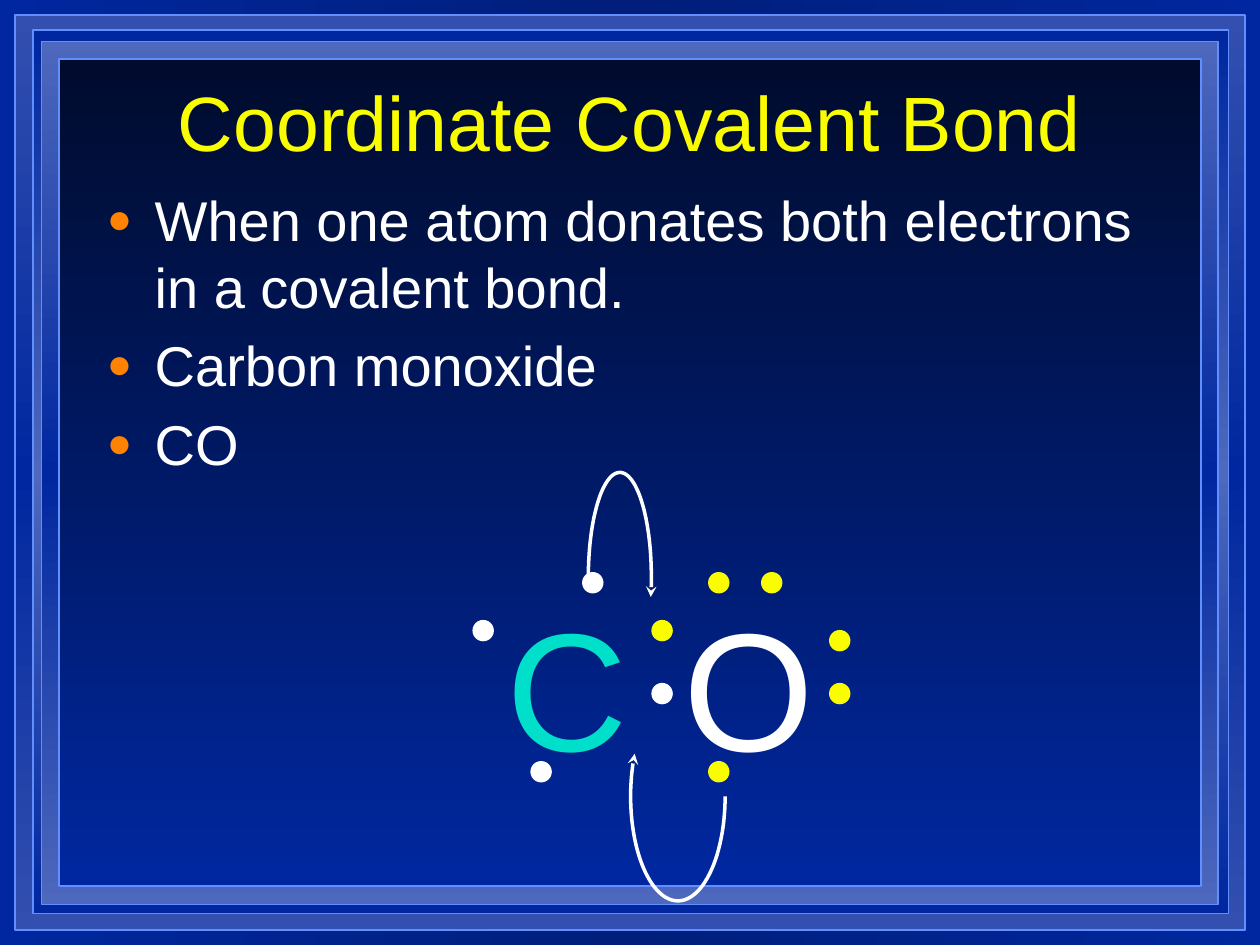
import math

from lxml import etree
from pptx import Presentation
from pptx import util as u
from pptx.dml.color import RGBColor
from pptx.enum import shapes, text
from pptx.oxml.ns import qn

COLOURS = {
    "blue": "00279F", "dusk": "001E7A", "night": "000B2D",
    "steel": "3350B0", "mist": "4D68BD", "edge": "618FFD",
    "yellow": "FAFD00", "white": "FFFFFF", "teal": "00DFCA", "orange": "FF8203",
}
FONT = "Arial"
DOT = 0.17


def rgb(name):
    return RGBColor.from_string(COLOURS[name])


def add_child(parent, tag, **attributes):
    return etree.SubElement(parent, qn(tag), attributes)


def set_gradient(fill, names, angle):
    """Spread the named colours evenly along a linear gradient."""
    fill.gradient()
    fill.gradient_angle = angle
    stops = fill.gradient_stops._gsLst
    for stop in list(stops):
        stops.remove(stop)
    for index, name in enumerate(names):
        position = round(100000 * index / (len(names) - 1))
        stop = add_child(stops, "a:gs", pos=str(position))
        add_child(stop, "a:srgbClr", val=COLOURS[name])


def add_bullet(para):
    properties = para._p.get_or_add_pPr()
    indent = u.Inches(0.38)
    properties.set("marL", str(indent))
    properties.set("indent", str(-indent))
    colour = add_child(properties, "a:buClr")
    add_child(colour, "a:srgbClr", val=COLOURS["orange"])
    add_child(properties, "a:buSzPct", val="75000")
    add_child(properties, "a:buFont", typeface=FONT)
    add_child(properties, "a:buChar", char="●")


def add_text(page, box, lines, size, colour, align=text.PP_ALIGN.LEFT,
             anchor=text.MSO_ANCHOR.TOP, bullets=False):
    frame = page.shapes.add_textbox(*map(u.Inches, box)).text_frame
    frame.word_wrap = True
    frame.vertical_anchor = anchor
    for index, line in enumerate(lines):
        para = frame.add_paragraph() if index else frame.paragraphs[0]
        para.alignment = align
        para.line_spacing = u.Pt(1.2 * size)
        if index:
            para.space_before = u.Pt(0.2 * size)
        if bullets:
            add_bullet(para)
        span = para.add_run()
        span.text = line
        span.font.name = FONT
        span.font.size = u.Pt(size)
        span.font.color.rgb = rgb(colour)


def add_frame(page):
    panels = [
        ((0.12, 0.12, 9.76, 7.26), ("steel", "blue", "steel")),
        ((0.26, 0.24, 9.49, 7.01), ("blue", "mist", "blue")),
        ((0.33, 0.33, 9.34, 6.85), ("mist", "blue", "mist")),
        ((0.47, 0.47, 9.06, 6.56), ("night", "blue")),
    ]
    for box, names in panels:
        panel = page.shapes.add_shape(shapes.MSO_SHAPE.RECTANGLE, *map(u.Inches, box))
        panel.shadow.inherit = False
        set_gradient(panel.fill, names, 270)
        panel.line.color.rgb = rgb("edge")
        panel.line.width = u.Pt(1)


def add_atom(page, left, top, symbol, colour, dot_colour, dots):
    """Place a symbol and its electrons, given as offsets from the symbol's box."""
    add_text(page, (left, top, 0.92, 1.7), [symbol], 96, colour)
    for across, down in dots:
        dot = page.shapes.add_shape(
            shapes.MSO_SHAPE.OVAL, u.Inches(left + across), u.Inches(top + down),
            u.Inches(DOT), u.Inches(DOT))
        dot.shadow.inherit = False
        dot.fill.solid()
        dot.fill.fore_color.rgb = rgb(dot_colour)
        dot.line.fill.background()


def add_curved_arrow(page, centre, radii, start, end, steps=60):
    """Draw an elliptical arc between two angles, clockwise in degrees."""
    points = []
    for step in range(steps + 1):
        angle = math.radians(start + (end - start) * step / steps)
        points.append((u.Inches(centre[0] + radii[0] * math.cos(angle)),
                       u.Inches(centre[1] + radii[1] * math.sin(angle))))
    builder = page.shapes.build_freeform(*points[0])
    builder.add_line_segments(points[1:], close=False)
    arrow = builder.convert_to_shape()
    arrow.shadow.inherit = False
    arrow.fill.background()
    arrow.line.color.rgb = rgb("white")
    arrow.line.width = u.Pt(2)
    add_child(arrow.line._get_or_add_ln(), "a:tailEnd", type="stealth")


def add_molecule(page, left, top):
    add_atom(page, left + 1.41, top, "O", "white", "yellow",
             [(1.25, 0.42), (1.25, 0.84), (0.71, -0.04), (0.29, -0.04),
              (-0.16, 0.34), (0.29, 1.46)])
    add_atom(page, left, top, "C", "teal", "white",
             [(1.25, 0.84), (0.7, -0.04), (-0.17, 0.34), (0.29, 1.46)])
    add_curved_arrow(page, (left + 1, top), (0.25, 0.83), 180, 371)
    add_curved_arrow(page, (left + 1.46, top + 1.74), (0.375, 0.83), 0, 204)


def main():
    deck = Presentation()
    deck.slide_width, deck.slide_height = u.Inches(10), u.Inches(7.5)
    page = deck.slides.add_slide(deck.slide_layouts[6])
    set_gradient(page.background.fill, ("blue", "dusk", "blue"), 0)
    add_frame(page)
    add_text(page, (0.75, 0.54, 8.5, 0.83), ["Coordinate Covalent Bond"], 44, "yellow",
             align=text.PP_ALIGN.CENTER, anchor=text.MSO_ANCHOR.MIDDLE)
    add_text(page, (0.75, 1.42, 8.5, 2.67),
             ["When one atom donates both electrons in a covalent bond.",
              "Carbon monoxide", "CO"], 32, "white", bullets=True)
    add_molecule(page, 3.92, 4.58)
    deck.save("out.pptx")


if __name__ == "__main__":
    main()
